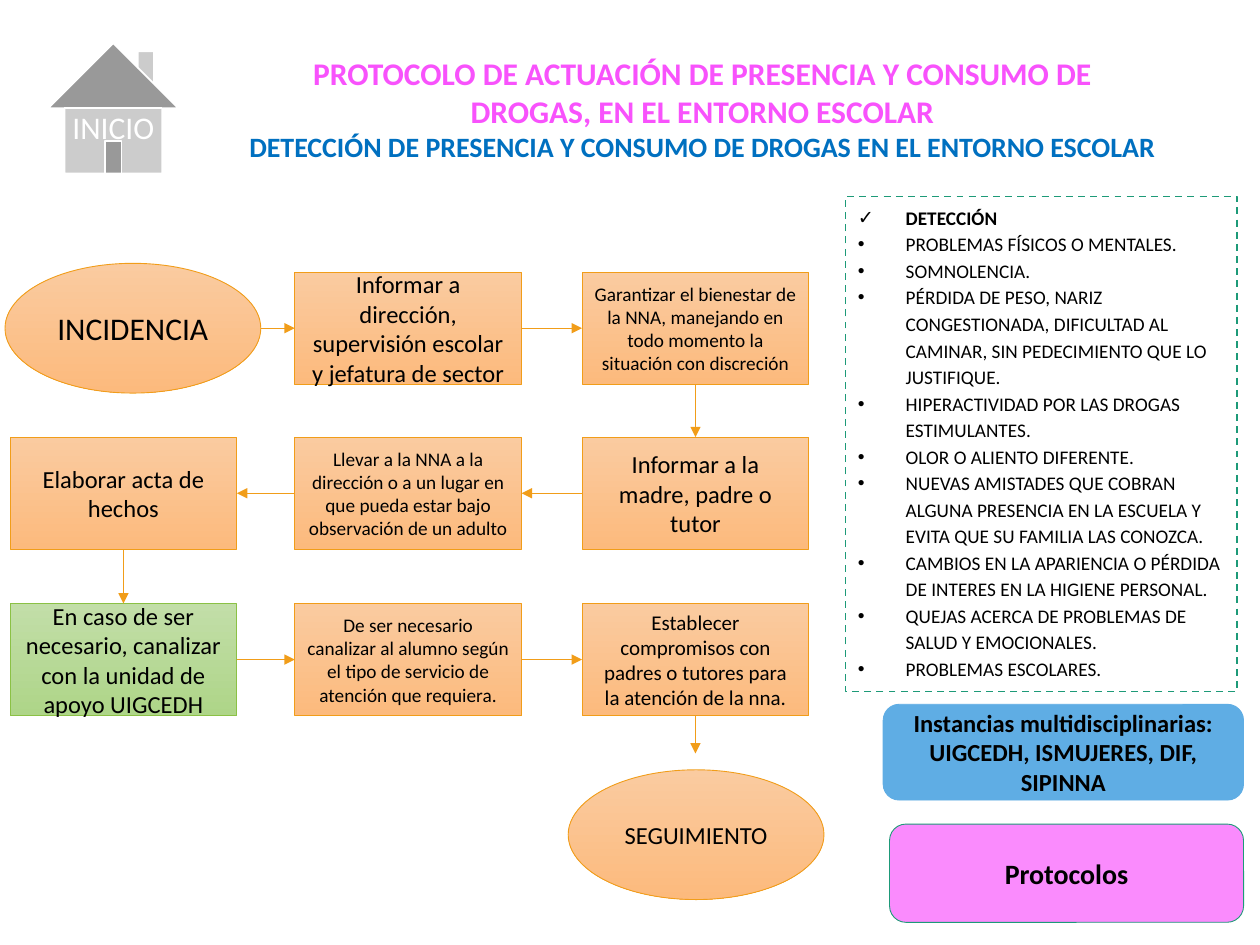
from lxml import etree
from pptx import Presentation
from pptx.dml.color import RGBColor
from pptx.enum.dml import MSO_LINE
from pptx.enum.shapes import MSO_CONNECTOR, MSO_SHAPE as SHAPE
from pptx.enum.text import MSO_ANCHOR as ANCHOR, PP_ALIGN as ALIGN
from pptx.oxml.ns import qn
from pptx.util import Inches, Pt

COLORS = {
    "title": "F852FC", "subtitle": "0070C0", "text": "000000", "white": "FFFFFF",
    "orange": "F19D19", "orange_top": "FACBA0", "orange_low": "FCBA7D",
    "green": "8BC145", "green_top": "C2DEA8", "green_low": "AED588",
    "teal": "1D9A78", "pink": "FA8BFD", "blue": "5FADE4",
}
RGB = {name: RGBColor.from_string(value) for name, value in COLORS.items()}

prs = Presentation()
prs.slide_width, prs.slide_height = Inches(10), Inches(7.5)
s = prs.slides.add_slide(prs.slide_layouts[6])


def write(p, text, size, color="text", bold=False, align=ALIGN.CENTER):
    p.text = text
    p.alignment = align
    font = p.runs[0].font
    font.name, font.size, font.bold = "Calibri", Pt(size), bold
    font.color.rgb = RGB[color]


def add_box(kind, box, fills, line, width=0.5):
    sp = s.shapes.add_shape(kind, *[Inches(v) for v in box])
    sp.shadow.inherit = False
    if len(fills) == 2:
        sp.fill.gradient()
        sp.fill.gradient_angle = 270
        for stop, name, position in zip(sp.fill.gradient_stops, fills, (0, 1)):
            stop.color.rgb = RGB[name]
            stop.position = position
    else:
        sp.fill.solid()
        sp.fill.fore_color.rgb = RGB[fills[0]]
    sp.line.color.rgb = RGB[line]
    sp.line.width = Pt(width)
    sp.text_frame.word_wrap = True
    sp.text_frame.vertical_anchor = ANCHOR.MIDDLE
    return sp


# Title
tf = s.shapes.add_textbox(Inches(1.88), Inches(0.38), Inches(7.39), Inches(1.25)).text_frame
tf.word_wrap = True
write(tf.paragraphs[0], "PROTOCOLO DE ACTUACIÓN DE PRESENCIA Y CONSUMO DE DROGAS, "
      "EN EL ENTORNO ESCOLAR", 18, "title", True)
write(tf.add_paragraph(), "DETECCIÓN DE PRESENCIA Y CONSUMO DE DROGAS EN EL ENTORNO ESCOLAR",
      16, "subtitle", True)

# Flow steps on a grid
COLS, ROWS = (0.08, 2.34, 4.62), (2.16, 3.47, 4.79)
BOX_W, BOX_H = 1.8, 0.89
steps = [
    (1, 0, 14, "Informar a dirección, supervisión escolar y jefatura de sector"),
    (2, 0, 11, "Garantizar el bienestar de la NNA, manejando en todo momento la "
               "situación con discreción"),
    (2, 1, 14, "Informar a la madre, padre o tutor"),
    (1, 1, 11, "Llevar a la NNA a la dirección o a un lugar en que pueda estar bajo "
               "observación de un adulto"),
    (0, 1, 14, "Elaborar acta de hechos"),
    (0, 2, 14, "En caso de ser necesario, canalizar con la unidad de apoyo UIGCEDH"),
    (1, 2, 11, "De ser necesario canalizar al alumno según el tipo de servicio de "
               "atención que requiera."),
    (2, 2, 12, "Establecer compromisos con padres o tutores para la atención de la nna."),
]
for col, row, size, text in steps:
    hue = "green" if (col, row) == (0, 2) else "orange"
    sp = add_box(SHAPE.RECTANGLE, (COLS[col], ROWS[row], BOX_W, BOX_H),
                 (hue + "_top", hue + "_low"), hue)
    write(sp.text_frame.paragraphs[0], text, size)

# Start and end
for x, y, size, text in [(0.04, 2.09, 18, "INCIDENCIA"), (4.51, 6.11, 14, "SEGUIMIENTO")]:
    sp = add_box(SHAPE.OVAL, (x, y, 2.03, 1.03), ("orange_top", "orange_low"), "orange")
    write(sp.text_frame.paragraphs[0], text, size)

# Arrows: from the start, between consecutive steps, and to the end
mid_x = [x + BOX_W / 2 for x in COLS]
mid_y = [y + BOX_H / 2 for y in ROWS]
arrows = [(2.07, mid_y[0], COLS[1], mid_y[0]),
          (mid_x[2], ROWS[2] + BOX_H, mid_x[2], 5.98)]
for (c1, r1, *_), (c2, r2, *_) in zip(steps, steps[1:]):
    if r1 != r2:
        arrows.append((mid_x[c1], ROWS[r1] + BOX_H, mid_x[c2], ROWS[r2]))
    elif c1 < c2:
        arrows.append((COLS[c1] + BOX_W, mid_y[r1], COLS[c2], mid_y[r2]))
    else:
        arrows.append((COLS[c1], mid_y[r1], COLS[c2] + BOX_W, mid_y[r2]))
for ends in arrows:
    line = s.shapes.add_connector(MSO_CONNECTOR.STRAIGHT, *[Inches(v) for v in ends])
    line.line.color.rgb = RGB["orange"]
    line.line.width = Pt(0.5)
    etree.SubElement(line.line._get_or_add_ln(), qn("a:tailEnd"), type="triangle")
    etree.SubElement(line._element.spPr, qn("a:effectLst"))

# Detection signs
signs = [
    "DETECCIÓN",
    "PROBLEMAS FÍSICOS O MENTALES.",
    "SOMNOLENCIA.",
    "PÉRDIDA DE PESO, NARIZ CONGESTIONADA, DIFICULTAD AL CAMINAR, "
    "SIN PEDECIMIENTO QUE LO JUSTIFIQUE.",
    "HIPERACTIVIDAD POR LAS DROGAS ESTIMULANTES.",
    "OLOR O ALIENTO DIFERENTE.",
    "NUEVAS AMISTADES QUE COBRAN ALGUNA PRESENCIA EN LA ESCUELA Y "
    "EVITA QUE SU FAMILIA LAS CONOZCA.",
    "CAMBIOS EN LA APARIENCIA O PÉRDIDA DE INTERES EN LA HIGIENE PERSONAL.",
    "QUEJAS ACERCA DE PROBLEMAS DE SALUD Y EMOCIONALES.",
    "PROBLEMAS ESCOLARES.",
]
sp = add_box(SHAPE.RECTANGLE, (6.71, 1.56, 3.11, 3.93), ("white",), "teal", 1)
sp.line.dash_style = MSO_LINE.DASH
tf = sp.text_frame
tf.vertical_anchor = ANCHOR.TOP
for i, text in enumerate(signs):
    p = tf.add_paragraph() if i else tf.paragraphs[0]
    write(p, text, 11, bold=i == 0, align=ALIGN.LEFT)
    p.line_spacing = 1.15
    pPr = p._p.get_or_add_pPr()
    pPr.set("marL", str(Inches(0.38)))
    pPr.set("indent", str(-Inches(0.38)))
    etree.SubElement(pPr, qn("a:buFont"), typeface="Arial")
    etree.SubElement(pPr, qn("a:buChar"), char="•" if i else "✓")
p.space_after = Pt(10)

# Buttons
buttons = [
    ((7.06, 6.54, 2.81, 0.78), "pink", "teal", 16, "Protocolos"),
    ((7.01, 5.59, 2.86, 0.76), "blue", "blue", 14,
     "Instancias multidisciplinarias: UIGCEDH, ISMUJERES, DIF, SIPINNA"),
]
for box, fill, line, size, text in buttons:
    sp = add_box(SHAPE.ROUNDED_RECTANGLE, box, (fill,), line)
    write(sp.text_frame.paragraphs[0], text, size, bold=True)

# Home button, its label lowered by the top inset
sp = add_box(SHAPE.ACTION_BUTTON_HOME, (0.21, 0.1, 1.38, 1.52), ("white",), "white", 1)
sp.text_frame.margin_top = Inches(0.35)
write(sp.text_frame.paragraphs[0], "INICIO", 18, "white")

prs.save("out.pptx")
